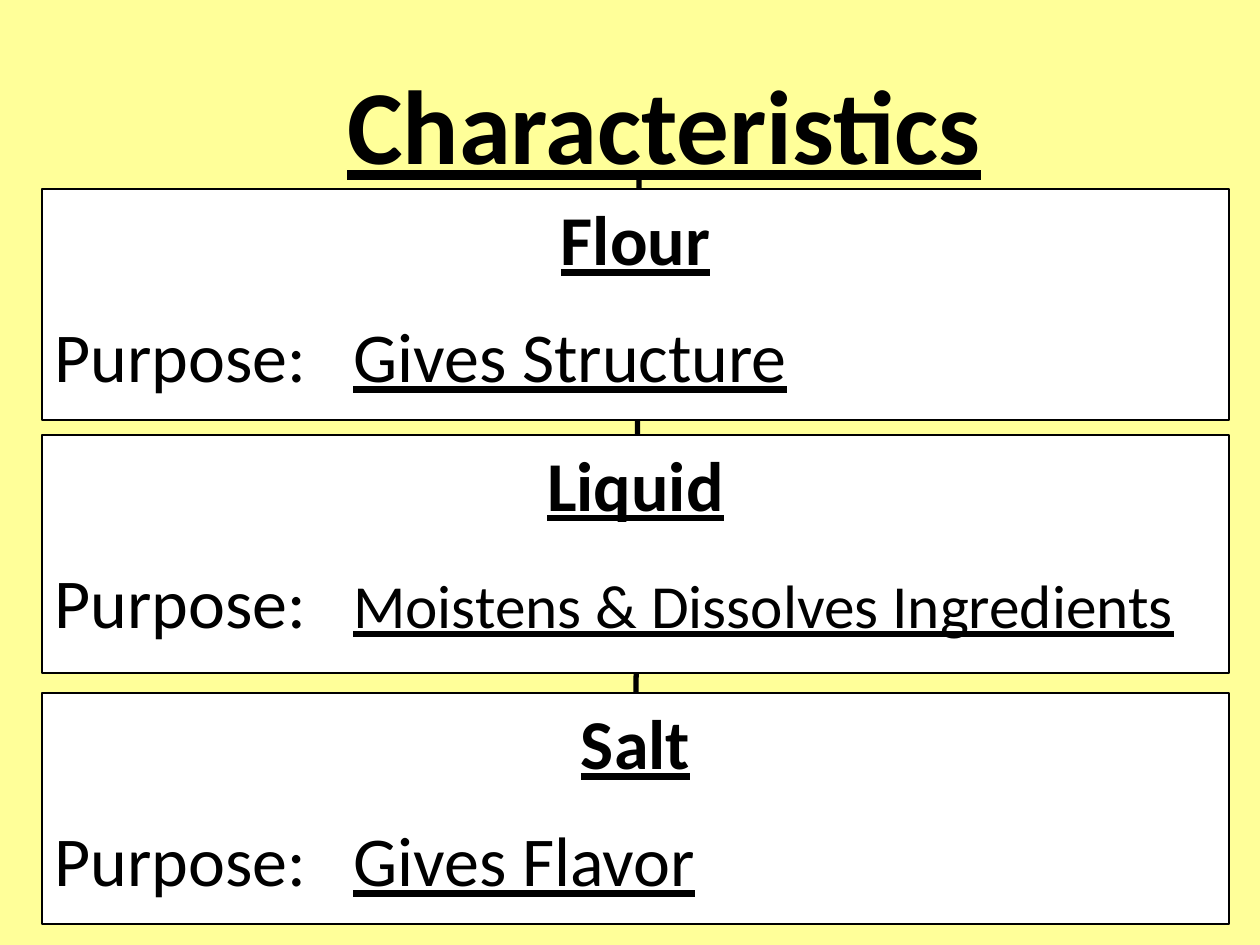
import pptx
import pptx.util
import pptx.dml.color
import pptx.enum.shapes
import pptx.enum.text
import pptx.oxml
import pptx.oxml.ns
import lxml.etree

PX = 914400 // 126
BLACK = pptx.dml.color.RGBColor(0, 0, 0)
WHITE = pptx.dml.color.RGBColor(255, 255, 255)
YELLOW = pptx.dml.color.RGBColor(255, 255, 153)
CENTER = pptx.enum.text.PP_ALIGN.CENTER
LEFT = pptx.enum.text.PP_ALIGN.LEFT


def add_text(p, text, size=40, bold=False, underline=True, align=CENTER):
    p.alignment = align
    r = p.add_run()
    r.text = text
    r.font.name = "Calibri"
    r.font.size = pptx.util.Pt(size)
    r.font.bold = bold
    r.font.underline = underline
    r.font.color.rgb = BLACK


prs = pptx.Presentation()
prs.slide_width = 1260 * PX
prs.slide_height = 945 * PX
s = prs.slides.add_slide(prs.slide_layouts[6])
s.background.fill.solid()
s.background.fill.fore_color.rgb = YELLOW

line = s.shapes.add_connector(
    pptx.enum.shapes.MSO_CONNECTOR.STRAIGHT, 639 * PX, 173 * PX, 635 * PX, 882 * PX
)
line.line.color.rgb = BLACK
line.line.width = pptx.util.Pt(3)
lxml.etree.SubElement(line._element.spPr, pptx.oxml.ns.qn("a:effectLst"))

title = s.shapes.add_textbox(213 * PX, 53 * PX, 902 * PX, 134 * PX)
title.text_frame.word_wrap = True
add_text(title.text_frame.paragraphs[0], "Characteristics", size=60, bold=True)

ingredients = [
    ("Flour", "Gives Structure", 40, 189, 231),
    ("Liquid", "Moistens & Dissolves Ingredients", 35, 435, 238),
    ("Salt", "Gives Flavor", 40, 693, 231),
]
for name, purpose, size, top, height in ingredients:
    sp = s.shapes.add_shape(
        pptx.enum.shapes.MSO_SHAPE.RECTANGLE, 42 * PX, top * PX, 1187 * PX, height * PX
    )
    sp.shadow.inherit = False
    sp.fill.solid()
    sp.fill.fore_color.rgb = WHITE
    sp.line.color.rgb = BLACK
    sp.line.width = pptx.util.Pt(1.5)
    tf = sp.text_frame
    tf.word_wrap = True
    tf.vertical_anchor = pptx.enum.text.MSO_ANCHOR.TOP
    add_text(tf.paragraphs[0], name, bold=True)
    p = tf.add_paragraph()
    p.space_before = pptx.util.Pt(19)
    add_text(p, "Purpose:\t", underline=False, align=LEFT)
    add_text(p, purpose, size=size, align=LEFT)
    tabs = lxml.etree.SubElement(p._p.get_or_add_pPr(), pptx.oxml.ns.qn("a:tabLst"))
    lxml.etree.SubElement(tabs, pptx.oxml.ns.qn("a:tab"), pos=str(299 * PX), algn="l")

prs.save("out.pptx")
